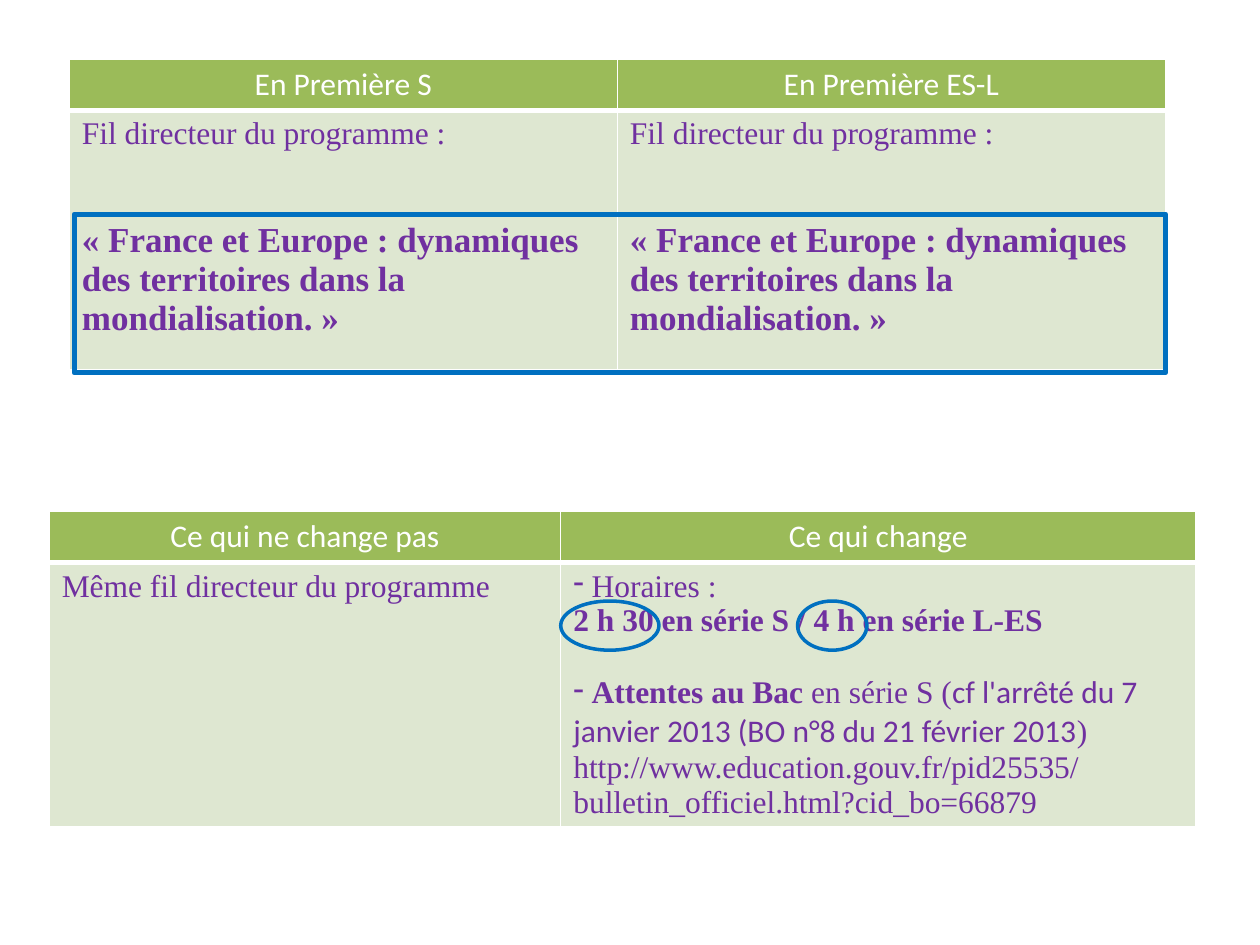
from lxml.etree import SubElement
from pptx import Presentation
from pptx.dml.color import RGBColor
from pptx.enum.shapes import MSO_SHAPE
from pptx.enum.text import PP_ALIGN
from pptx.oxml.ns import qn
from pptx.util import Inches, Pt

COLORS = {"header": "9BBB59", "body": "DEE7D1", "white": "FFFFFF",
          "text": "7030A0", "outline": "0070C0"}
SERIF, SANS = "Times New Roman", "Calibri"


def add_span(para, text, color="text", font=SERIF, size=18, bold=False):
    span = para.add_run()
    span.text = text
    span.font.name = font
    span.font.size = Pt(size)
    span.font.bold = bold
    span.font.color.rgb = RGBColor.from_string(COLORS[color])


def paint_cell(cell, color, bottom_width):
    """Fill a cell and give it white borders."""
    properties = cell._tc.get_or_add_tcPr()
    for side, width in (("L", 1), ("R", 1), ("T", 1), ("B", bottom_width)):
        border = SubElement(properties, qn(f"a:ln{side}"), w=str(Pt(width)))
        fill = SubElement(border, qn("a:solidFill"))
        SubElement(fill, qn("a:srgbClr"), val=COLORS["white"])
    cell.fill.solid()
    cell.fill.fore_color.rgb = RGBColor.from_string(COLORS[color])


# A paragraph is (space before in points, dash bullet, spans).
guideline = [
    (0, False, [("Fil directeur du programme :", {})]),
    (40, False, [("« France et Europe : dynamiques des territoires dans la mondialisation. »",
                  {"size": 20, "bold": True})]),
]
unchanged = [(0, False, [("Même fil directeur du programme", {})])]
changes = [
    (0, True, [(" Horaires :", {})]),
    (0, False, [("2 h 30 en série S / 4 h en série L-ES", {"bold": True})]),
    (20, True, [
        (" ", {}),
        ("Attentes au Bac ", {"bold": True}),
        ("en série S (", {}),
        ("cf l'arrêté du 7 janvier 2013 (BO n°8 du 21 février 2013", {"font": SANS}),
        (")", {}),
    ]),
    (0, False, [("http://www.education.gouv.fr/pid25535/bulletin_officiel.html?cid_bo=66879", {})]),
]

# Left, top, column widths, row heights, then (header, body) per column.
tables = [
    (0.55, 0.47, (4.35, 4.35), (0.4, 2.06),
     [("En Première S", guideline), ("En Première ES-L", guideline)]),
    (0.39, 4.06, (4.06, 5.04), (0.4, 2.1),
     [("Ce qui ne change pas", unchanged), ("Ce qui change", changes)]),
]

deck = Presentation()
deck.slide_width, deck.slide_height = Inches(10), Inches(7.5)
page = deck.slides.add_slide(deck.slide_layouts[6])

for left, top, widths, heights, columns in tables:
    table = page.shapes.add_table(
        2, 2, Inches(left), Inches(top),
        Inches(sum(widths)), Inches(sum(heights))).table
    table.horz_banding = False
    for row, height in zip(table.rows, heights):
        row.height = Inches(height)
    for index, (header, body) in enumerate(columns):
        table.columns[index].width = Inches(widths[index])
        header_cell, body_cell = table.cell(0, index), table.cell(1, index)
        paint_cell(header_cell, "header", 3)
        paint_cell(body_cell, "body", 1)

        title = header_cell.text_frame.paragraphs[0]
        title.alignment = PP_ALIGN.CENTER
        add_span(title, header, "white", SANS)

        frame = body_cell.text_frame
        for number, (space, dashed, spans) in enumerate(body):
            para = frame.add_paragraph() if number else frame.paragraphs[0]
            para.space_before = Pt(space)
            if dashed:
                SubElement(para._p.get_or_add_pPr(), qn("a:buFontTx"))
                SubElement(para._p.get_or_add_pPr(), qn("a:buChar"), char="-")
            for text, style in spans:
                add_span(para, text, **style)

outlines = [
    (MSO_SHAPE.OVAL, 4.45, 4.77, 0.78, 0.39, 2),
    (MSO_SHAPE.OVAL, 6.33, 4.77, 0.55, 0.39, 2),
    (MSO_SHAPE.RECTANGLE, 0.59, 1.7, 8.66, 1.26, 3),
]
for kind, left, top, width, height, weight in outlines:
    outline = page.shapes.add_shape(
        kind, Inches(left), Inches(top), Inches(width), Inches(height))
    outline.shadow.inherit = False
    outline.fill.background()
    outline.line.color.rgb = RGBColor.from_string(COLORS["outline"])
    outline.line.width = Pt(weight)

deck.save("out.pptx")
